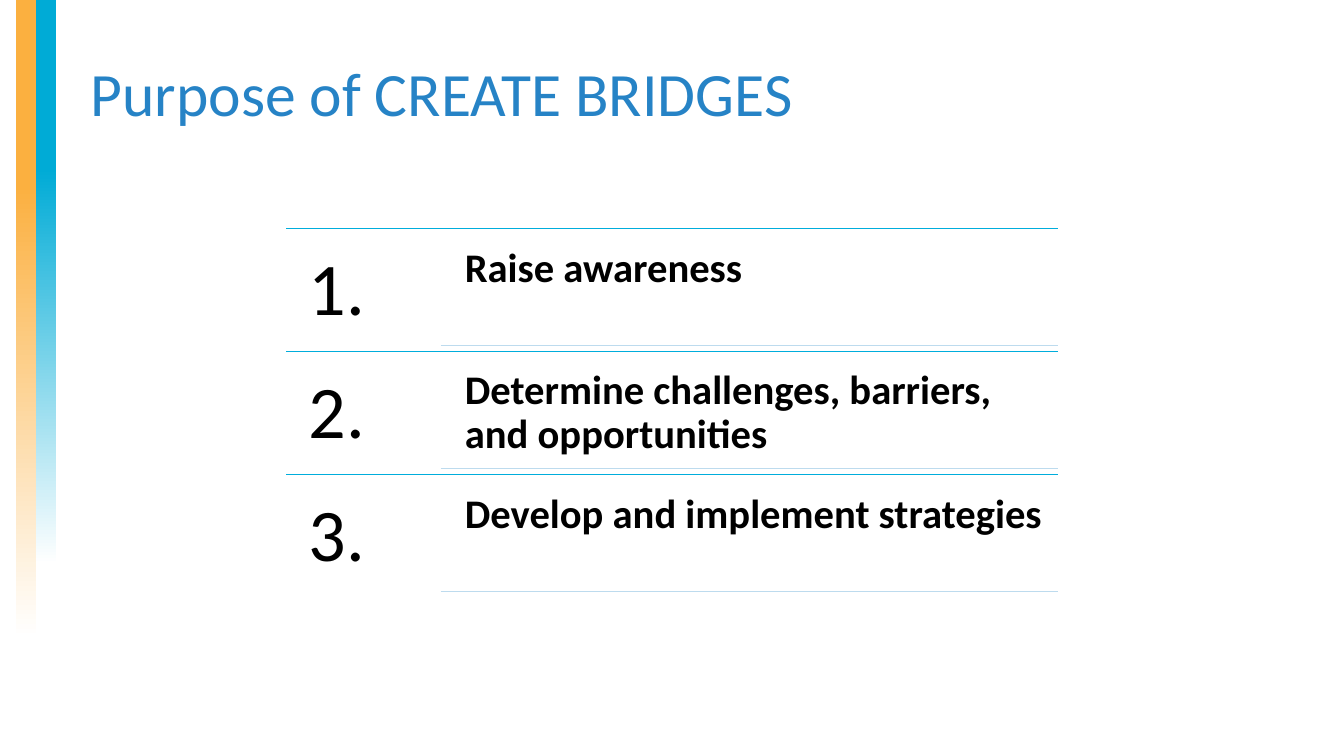
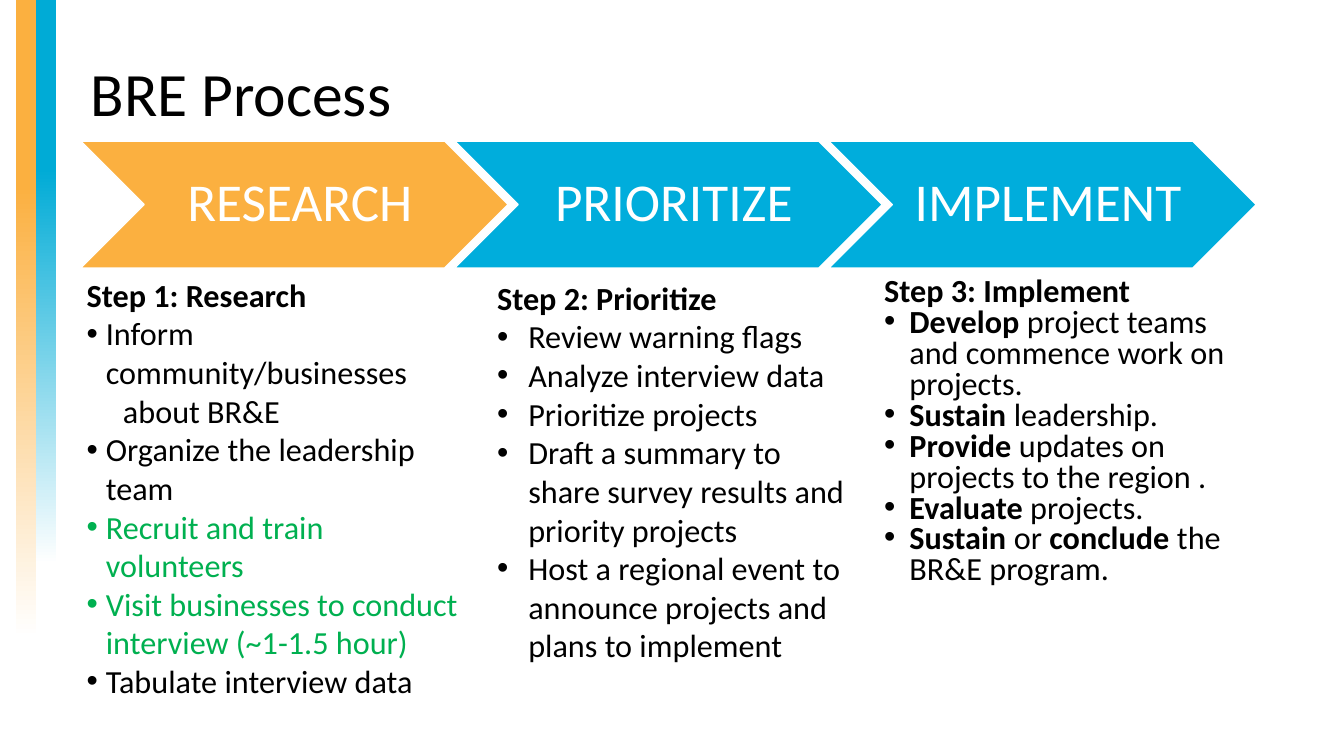
from lxml.etree import SubElement
from pptx import Presentation
from pptx.dml.color import RGBColor
from pptx.enum.shapes import MSO_CONNECTOR, MSO_SHAPE
from pptx.enum.text import MSO_ANCHOR, MSO_AUTO_SIZE, PP_ALIGN
from pptx.oxml.ns import qn
from pptx.util import Inches, Pt

FONT = "Calibri"
BLACK = RGBColor(0x00, 0x00, 0x00)
WHITE = RGBColor(0xFF, 0xFF, 0xFF)
BLUE = RGBColor(0x26, 0x83, 0xC6)
CYAN = RGBColor(0x00, 0xAD, 0xDC)
PALE = RGBColor(0xBD, 0xDB, 0xEE)
ORANGE = RGBColor(0xFB, 0xB0, 0x40)
BAND_CYAN = RGBColor(0x00, 0xAB, 0xD6)
GREEN = RGBColor(0x00, 0xB0, 0x50)

# left, height, colour, share of the band before it starts to fade
BANDS = [(0.16, 6.33, ORANGE, 0.29), (0.36, 5.6, BAND_CYAN, 0.3)]

PURPOSES = [
    "Raise awareness",
    "Determine challenges, barriers, and opportunities",
    "Develop and implement strategies",
]
PHASES = [("RESEARCH", ORANGE), ("PRIORITIZE", CYAN), ("IMPLEMENT", CYAN)]

# Items are text, or (text, style); **words** are bold.
STEPS = [
    dict(box=(0.76, 2.68, 3.96, 4.36), indent=0.19, hang=0.19, spacing=1.0,
         heading="Step 1: Research", heading_at=0,
         items=["Inform community/businesses",
                ("about BR&E", "continued"),
                "Organize the leadership team",
                ("Recruit and train volunteers", "green"),
                ("Visit businesses to conduct interview (~1-1.5 hour)", "green"),
                "Tabulate interview data"]),
    dict(box=(4.83, 2.71, 3.67, 3.97), indent=0.31, hang=0.31, spacing=1.0,
         heading="Step 2: Prioritize", heading_at=0,
         items=["Review warning flags",
                "Analyze interview data",
                "Prioritize projects",
                "Draft a summary to share survey results and priority projects",
                "Host a regional event to announce projects and plans to implement"]),
    dict(box=(8.61, 2.71, 4.02, 3.22), indent=0.31, hang=0.25, spacing=0.8,
         heading="Step 3: Implement", heading_at=0.06,
         items=["**Develop** project teams and commence work on projects.",
                "**Sustain** leadership.",
                "**Provide** updates on projects to the region .",
                "**Evaluate** projects.",
                "**Sustain** or **conclude** the BR&E program."]),
]


def place(sp, left, top, width, height):
    sp.left, sp.top, sp.width, sp.height = map(Inches, (left, top, width, height))


def style(font, size, color, bold=False):
    font.name, font.size, font.bold = FONT, Pt(size), bold
    font.color.rgb = color


def set_insets(tf, left, others):
    tf.margin_left = Inches(left)
    tf.margin_top = tf.margin_right = tf.margin_bottom = Inches(others)


def add_bands(prs, slide):
    """Draw the fading side bands and move them to the slide master."""
    for i, (left, height, color, solid) in enumerate(BANDS):
        sp = slide.shapes.add_shape(MSO_SHAPE.RECTANGLE, Inches(left), 0,
                                    Inches(0.2), Inches(height))
        sp.shadow.inherit = False
        sp.line.fill.background()
        sp.fill.gradient()
        sp.fill.gradient_angle = 270
        for stop, rgb, position in zip(sp.fill.gradient_stops,
                                       (color, WHITE), (solid, 1)):
            stop.color.rgb, stop.position = rgb, position
        prs.slide_master.shapes.element.insert(2 + i, sp.element)


def add_slide(prs, layout, title, color):
    slide = prs.slides.add_slide(prs.slide_layouts.get_by_name(layout))
    sp = slide.shapes.title
    place(sp, 0.8, 0.23, 12.21, 1.45)
    tf = sp.text_frame
    tf.text = title
    tf.vertical_anchor = MSO_ANCHOR.MIDDLE
    tf.auto_size = MSO_AUTO_SIZE.NONE
    p = tf.paragraphs[0]
    p.alignment, p.line_spacing = PP_ALIGN.LEFT, 0.9
    style(p.runs[0].font, 44, color)
    return slide


def add_rule(slide, left, right, y, color):
    line = slide.shapes.add_connector(MSO_CONNECTOR.STRAIGHT, Inches(left),
                                      Inches(y), Inches(right), Inches(y))
    line.line.color.rgb, line.line.width = color, Pt(1)
    SubElement(line.element.spPr, qn("a:effectLst"))


def add_text(slide, text, box, inset, size, bold=False):
    sp = slide.shapes.add_textbox(*map(Inches, box))
    tf = sp.text_frame
    tf.word_wrap = True
    set_insets(tf, inset, inset)
    tf.text = text
    tf.paragraphs[0].line_spacing = 0.9
    style(tf.paragraphs[0].runs[0].font, size, BLACK, bold)


def add_purposes(slide):
    left, text_left, right, top, row = 2.84, 4.37, 10.49, 2.27, 1.22
    for i, purpose in enumerate(PURPOSES):
        y = top + i * row
        add_rule(slide, left, right, y, CYAN)
        add_text(slide, f"{i + 1}.", (left, y, text_left - left, row), 0.22, 53)
        add_text(slide, purpose, (text_left + 0.12, y + 0.06, 6.01, 1.11),
                 0.12, 29, True)
        add_rule(slide, text_left, right, y + 1.16, PALE)


def add_phases(slide):
    left, pitch = 0.8, 3.71
    for i, (name, color) in enumerate(PHASES):
        sp = slide.shapes.add_shape(MSO_SHAPE.CHEVRON, Inches(left + i * pitch),
                                    Inches(1.4), Inches(4.24), Inches(1.26))
        sp.shadow.inherit = False
        sp.fill.solid()
        sp.fill.fore_color.rgb = color
        sp.line.color.rgb, sp.line.width = WHITE, Pt(1)
        tf = sp.text_frame
        tf.text = name
        tf.vertical_anchor = MSO_ANCHOR.MIDDLE
        set_insets(tf, 0.17, 0.06)
        p = tf.paragraphs[0]
        p.alignment, p.line_spacing = PP_ALIGN.CENTER, 0.9
        style(p.runs[0].font, 38, WHITE)


def add_line(p, text, indent, hang, bullet, spacing, color=BLACK):
    pPr = p._p.get_or_add_pPr()
    pPr.set("marL", str(Inches(indent)))
    pPr.set("indent", str(-Inches(hang)))
    if bullet:
        SubElement(pPr, qn("a:buFont"), typeface="Arial")
        SubElement(pPr, qn("a:buChar"), char="•")
    else:
        SubElement(pPr, qn("a:buNone"))
    p.alignment, p.line_spacing = PP_ALIGN.LEFT, spacing
    p.space_before = p.space_after = Pt(0)
    for i, part in enumerate(text.split("**")):
        if part:
            r = p.add_run()
            r.text = part
            style(r.font, 23, color, bold=i % 2 == 1)


def fill_step(sp, step):
    place(sp, *step["box"])
    tf = sp.text_frame
    tf.word_wrap = True
    tf.auto_size = MSO_AUTO_SIZE.NONE
    tf.vertical_anchor = MSO_ANCHOR.TOP
    indent, hang, spacing = step["indent"], step["hang"], step["spacing"]
    add_line(tf.paragraphs[0], f"**{step['heading']}**", step["heading_at"], 0,
             False, spacing)
    for item in step["items"]:
        text, kind = item if isinstance(item, tuple) else (item, "")
        p = tf.add_paragraph()
        if kind == "continued":
            add_line(p, text, indent + 0.17, 0, False, spacing)
        else:
            add_line(p, text, indent, hang, True, spacing,
                     GREEN if kind == "green" else BLACK)


def main():
    prs = Presentation()
    prs.slide_width, prs.slide_height = Inches(13.33), Inches(7.5)

    purpose = add_slide(prs, "Title Only", "Purpose of CREATE BRIDGES", BLUE)
    add_bands(prs, purpose)
    add_purposes(purpose)

    process = add_slide(prs, "Comparison", "BRE Process", BLACK)
    add_phases(process)
    bodies = list(process.placeholders)[1:]
    for sp, step in zip(bodies, STEPS):
        fill_step(sp, step)
    for sp in bodies[len(STEPS):]:
        sp.element.getparent().remove(sp.element)

    prs.save("out.pptx")


if __name__ == "__main__":
    main()
